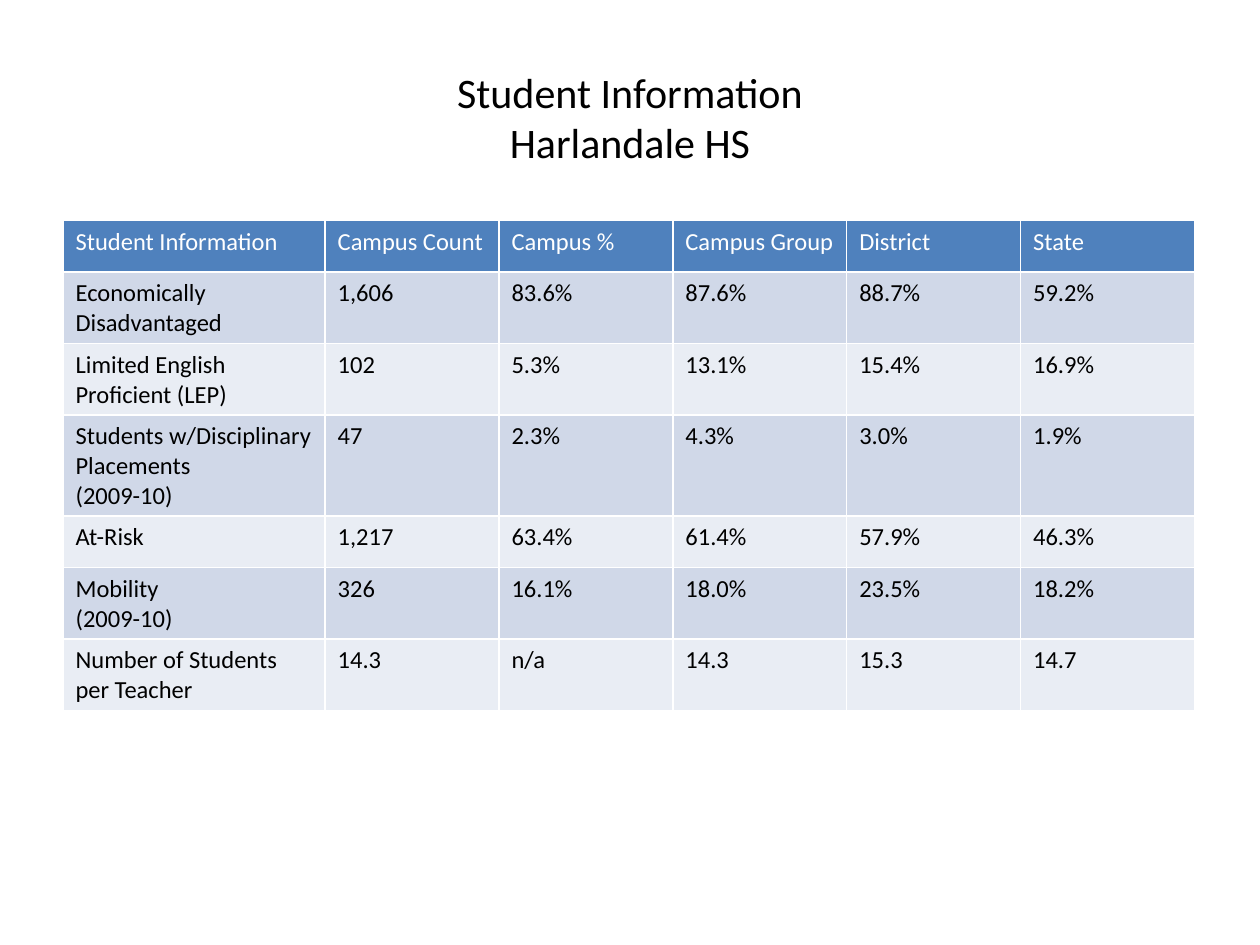
"""Build the Student Information table slide for Harlandale HS."""
from pptx import Presentation
from pptx.dml.color import RGBColor
from pptx.enum import text
from pptx.util import Inches, Pt

FONT = "Calibri"
COLORS = {"header": "4F81BD", "odd": "D0D8E8", "even": "E9EDF4",
          "light": "FFFFFF", "dark": "000000"}
TITLE = "Student Information\vHarlandale HS"
ROWS = [
    ("Student Information", "Campus Count", "Campus %", "Campus Group", "District", "State"),
    ("Economically Disadvantaged", "1,606", "83.6%", "87.6%", "88.7%", "59.2%"),
    ("Limited English Proficient (LEP)", "102", "5.3%", "13.1%", "15.4%", "16.9%"),
    ("Students w/Disciplinary Placements\n(2009-10)", "47", "2.3%", "4.3%", "3.0%", "1.9%"),
    ("At-Risk", "1,217", "63.4%", "61.4%", "57.9%", "46.3%"),
    ("Mobility\n(2009-10)", "326", "16.1%", "18.0%", "23.5%", "18.2%"),
    ("Number of Students per Teacher", "14.3", "n/a", "14.3", "15.3", "14.7"),
]
LEFT, WIDTH = 0.5, 9
LABEL_WIDTH, VALUE_WIDTH, ROW_HEIGHT = 2.08, 1.38, 0.41


def rgb(name):
    return RGBColor.from_string(COLORS[name])


def style(frame, size, color):
    for paragraph in frame.paragraphs:
        paragraph.font.name = FONT
        paragraph.font.size = Pt(size)
        paragraph.font.bold = False
        paragraph.font.color.rgb = rgb(color)


def add_title(slide):
    title = slide.shapes.add_textbox(
        Inches(LEFT), Inches(0.3), Inches(WIDTH), Inches(1.25)).text_frame
    title.word_wrap = True
    title.vertical_anchor = text.MSO_ANCHOR.MIDDLE
    title.text = TITLE
    title.paragraphs[0].alignment = text.PP_ALIGN.CENTER
    style(title, 24, "dark")


def add_student_table(slide):
    students = slide.shapes.add_table(
        len(ROWS), len(ROWS[0]), Inches(LEFT), Inches(1.75),
        Inches(WIDTH), Inches(ROW_HEIGHT * len(ROWS))).table
    for index, column in enumerate(students.columns):
        column.width = Inches(VALUE_WIDTH if index else LABEL_WIDTH)
    for r, values in enumerate(ROWS):
        students.rows[r].height = Inches(ROW_HEIGHT)
        band = "header" if r == 0 else "odd" if r % 2 else "even"
        for c, value in enumerate(values):
            cell = students.cell(r, c)
            cell.text = value
            cell.fill.solid()
            cell.fill.fore_color.rgb = rgb(band)
            style(cell.text_frame, 14, "dark" if r else "light")


def main():
    deck = Presentation()
    deck.slide_width, deck.slide_height = Inches(10), Inches(7.5)
    slide = deck.slides.add_slide(deck.slide_layouts[6])
    add_title(slide)
    add_student_table(slide)
    deck.save("out.pptx")


if __name__ == "__main__":
    main()
